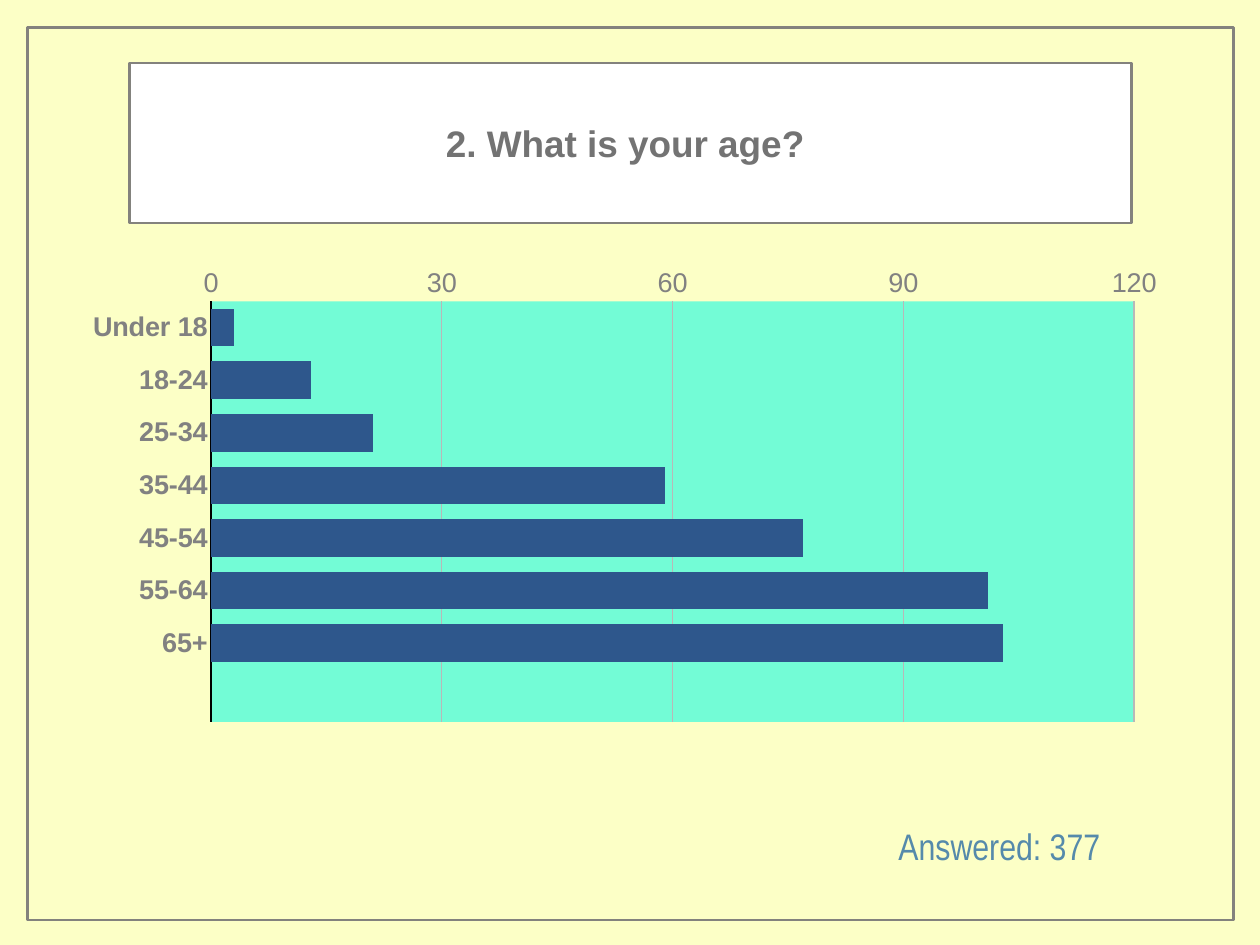
from dataclasses import dataclass

from lxml import etree
from pptx import Presentation
from pptx.chart.data import CategoryChartData
from pptx.dml.color import RGBColor
from pptx.enum.chart import XL_AXIS_CROSSES, XL_CHART_TYPE, XL_TICK_MARK
from pptx.enum.shapes import MSO_SHAPE
from pptx.enum.text import MSO_ANCHOR, PP_ALIGN
from pptx.oxml import parse_xml
from pptx.oxml.ns import nsdecls, qn
from pptx.util import Inches, Pt

RECTANGLE = MSO_SHAPE.RECTANGLE
BAR_CLUSTERED = XL_CHART_TYPE.BAR_CLUSTERED
AXIS_MAXIMUM = XL_AXIS_CROSSES.MAXIMUM
NO_TICK = XL_TICK_MARK.NONE
MIDDLE = MSO_ANCHOR.MIDDLE
CENTER = PP_ALIGN.CENTER


@dataclass(frozen=True)
class Theme:
    background: str = "FCFFC6"
    border: str = "83827D"
    panel: str = "FFFFFF"
    title: str = "737373"
    accent: str = "558AAB"
    bar: str = "2E578C"
    plot: str = "73FCD6"
    grid: str = "B8B8B8"
    axis_text: str = "818181"
    axis_line: str = "000000"
    font: str = "Arial"
    narrow_font: str = "Arial Narrow"
    heading_size: int = 30
    axis_size: int = 22
    chart_size: int = 10
    border_width: int = 2


THEME = Theme()
AGE_COUNTS = {
    "Under 18": 3,
    "18-24": 13,
    "25-34": 21,
    "35-44": 59,
    "45-54": 77,
    "55-64": 101,
    "65+": 103,
    "": None,
}
PLOT_LAYOUT = {"x": 0.129, "y": 0.064, "w": 0.849, "h": 0.833}


def color(value):
    return RGBColor.from_string(value)


def style_font(font, size, value, name=THEME.font, bold=False):
    font.name = name
    font.size = Pt(size)
    font.bold = bold
    font.color.rgb = color(value)


def style_line(line, value, width=1):
    line.color.rgb = color(value)
    line.width = Pt(width)


def add_panel(page, left, top, width, height, fill=None):
    panel = page.shapes.add_shape(
        RECTANGLE, Inches(left), Inches(top), Inches(width), Inches(height)
    )
    panel.shadow.inherit = False
    if fill:
        panel.fill.solid()
        panel.fill.fore_color.rgb = color(fill)
    else:
        panel.fill.background()
    style_line(panel.line, THEME.border, THEME.border_width)
    return panel


def write_text(box, text, value, name=THEME.font, bold=False):
    frame = box.text_frame
    frame.word_wrap = True
    frame.vertical_anchor = MIDDLE
    frame.margin_left = frame.margin_right = Inches(0.06)
    frame.margin_top = frame.margin_bottom = Inches(0.06)
    para = frame.paragraphs[0]
    para.alignment = CENTER
    span = para.add_run()
    span.text = text
    style_font(span.font, THEME.heading_size, value, name, bold)


def style_axis(axis, bold=False):
    axis.major_tick_mark = NO_TICK
    axis.minor_tick_mark = NO_TICK
    axis.tick_labels.number_format = "General"
    axis.tick_labels.number_format_is_linked = False
    style_font(axis.tick_labels.font, THEME.axis_size, THEME.axis_text, bold=bold)


def style_plot_area(chart):
    area = chart.element.find(".//" + qn("c:plotArea"))
    for layout in area.findall(qn("c:layout")):
        area.remove(layout)
    layout = parse_xml(f"<c:layout {nsdecls('c')}><c:manualLayout/></c:layout>")
    settings = {"layoutTarget": "inner", "xMode": "edge", "yMode": "edge", **PLOT_LAYOUT}
    for tag, value in settings.items():
        etree.SubElement(layout[0], qn(f"c:{tag}")).set("val", str(value))
    area.insert(0, layout)
    area.append(parse_xml(
        f"<c:spPr {nsdecls('c', 'a')}><a:solidFill>"
        f'<a:srgbClr val="{THEME.plot}"/></a:solidFill>'
        "<a:ln><a:noFill/></a:ln></c:spPr>"
    ))


def add_age_chart(page, left, top, width, height):
    data = CategoryChartData()
    data.categories = list(AGE_COUNTS)
    data.add_series("Series 1", list(AGE_COUNTS.values()))
    chart = page.shapes.add_chart(
        BAR_CLUSTERED, Inches(left), Inches(top), Inches(width), Inches(height), data
    ).chart
    chart.has_title = False
    chart.has_legend = False
    style_font(chart.font, THEME.chart_size, THEME.accent)

    plot = chart.plots[0]
    plot.vary_by_categories = False
    plot.gap_width = 40
    plot.overlap = -10
    bars = plot.series[0].format
    bars.fill.solid()
    bars.fill.fore_color.rgb = color(THEME.bar)

    ages = chart.category_axis
    style_axis(ages, bold=True)
    ages.reverse_order = True
    ages.crosses = AXIS_MAXIMUM
    ages.has_major_gridlines = False
    style_line(ages.format.line, THEME.axis_line)

    counts = chart.value_axis
    style_axis(counts)
    counts.minimum_scale = 0
    counts.maximum_scale = 120
    counts.major_unit = 30
    counts.has_major_gridlines = True
    style_line(counts.major_gridlines.format.line, THEME.grid)
    counts.format.line.fill.background()
    style_plot_area(chart)


def main():
    deck = Presentation()
    deck.slide_width = Inches(14.22)
    deck.slide_height = Inches(10.67)
    page = deck.slides.add_slide(deck.slide_layouts[6])
    page.background.fill.solid()
    page.background.fill.fore_color.rgb = color(THEME.background)

    add_panel(page, 0.31, 0.31, 13.61, 10.08)
    title = add_panel(page, 1.46, 0.71, 11.31, 1.81, THEME.panel)
    write_text(title, "2. What is your age? ", THEME.title, bold=True)
    add_age_chart(page, 0.8, 3.03, 12.27, 5.71)
    answered = page.shapes.add_textbox(
        Inches(9.36), Inches(9.24), Inches(3.84), Inches(0.61)
    )
    write_text(answered, "Answered: 377", THEME.accent, THEME.narrow_font)
    deck.save("out.pptx")


if __name__ == "__main__":
    main()
